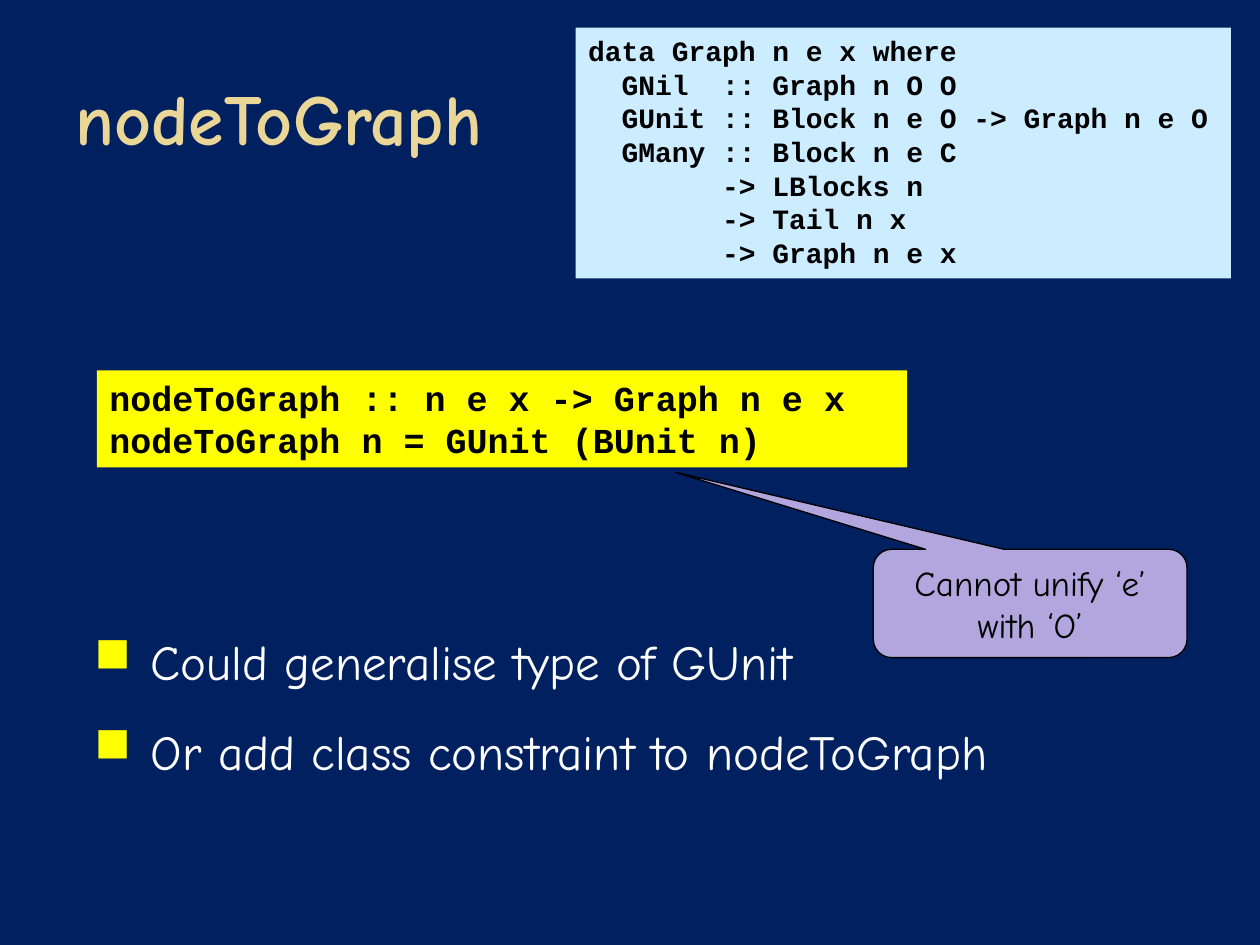
from dataclasses import dataclass

from lxml import etree
from pptx import Presentation
from pptx.dml.color import RGBColor
from pptx.enum.shapes import MSO_SHAPE
from pptx.enum.text import MSO_ANCHOR, PP_ALIGN
from pptx.oxml.ns import qn
from pptx.slide import Slide
from pptx.text.text import TextFrame, _Paragraph
from pptx.util import Pt

RECTANGLE = MSO_SHAPE.RECTANGLE
CALLOUT = MSO_SHAPE.ROUNDED_RECTANGULAR_CALLOUT
TOP, MIDDLE = MSO_ANCHOR.TOP, MSO_ANCHOR.MIDDLE
LEFT, CENTER = PP_ALIGN.LEFT, PP_ALIGN.CENTER

NAVY = RGBColor(0x00, 0x20, 0x60)
GOLD = RGBColor(0xEA, 0xD6, 0x96)
YELLOW = RGBColor(0xFF, 0xFF, 0x00)
PALE_BLUE = RGBColor(0xCC, 0xEC, 0xFF)
LILAC = RGBColor(0xB2, 0xA6, 0xDF)
BLACK = RGBColor(0x00, 0x00, 0x00)
WHITE = RGBColor(0xFF, 0xFF, 0xFF)

HAND = "Comic Neue"
CODE = "Courier New"


@dataclass(frozen=True)
class Area:
    """A rectangle on the slide, in points."""

    left: float
    top: float
    width: float
    height: float

    def lengths(self) -> tuple[Pt, Pt, Pt, Pt]:
        """Return the rectangle as lengths."""
        return Pt(self.left), Pt(self.top), Pt(self.width), Pt(self.height)


@dataclass(frozen=True)
class Style:
    """The look of a block of text."""

    font: str
    size: float
    color: RGBColor
    bold: bool = False
    align: PP_ALIGN = LEFT
    anchor: MSO_ANCHOR = TOP
    wrap: bool = True


@dataclass(frozen=True)
class CodePanel:
    """A filled panel of source code."""

    area: Area
    fill: RGBColor
    size: float
    lines: tuple[str, ...]


TITLE_STYLE = Style(HAND, 41, GOLD, bold=True, anchor=MIDDLE)
BODY_STYLE = Style(HAND, 28, WHITE)
CALLOUT_STYLE = Style(HAND, 20, BLACK, align=CENTER, anchor=MIDDLE)

BULLETS = ("Could generalise type of GUnit", "Or add class constraint to nodeToGraph")
PANELS = (
    CodePanel(
        Area(55.4, 211.7, 463, 55.4), YELLOW, 20,
        ("nodeToGraph :: n e x -> Graph n e x", "nodeToGraph n = GUnit (BUnit n)"),
    ),
    CodePanel(
        Area(329, 15.8, 374.4, 143.3), PALE_BLUE, 16,
        (
            "data Graph n e x where",
            "  GNil  :: Graph n O O",
            "  GUnit :: Block n e O -> Graph n e O",
            "  GMany :: Block n e C",
            "        -> LBlocks n",
            "        -> Tail n x",
            "        -> Graph n e x",
        ),
    ),
)


def write(frame: TextFrame, lines: tuple[str, ...], style: Style) -> None:
    """Fill a text frame with one paragraph per line."""
    frame.word_wrap = style.wrap
    frame.vertical_anchor = style.anchor
    frame.text = "\n".join(lines)
    for paragraph in frame.paragraphs:
        paragraph.alignment = style.align
        paragraph.font.name = style.font
        paragraph.font.size = Pt(style.size)
        paragraph.font.bold = style.bold
        paragraph.font.color.rgb = style.color


def add_text(page: Slide, area: Area, lines: tuple[str, ...], style: Style) -> TextFrame:
    """Add a text box and return its frame."""
    frame = page.shapes.add_textbox(*area.lengths()).text_frame
    write(frame, lines, style)
    return frame


def add_bullet(paragraph: _Paragraph) -> None:
    """Give a paragraph a hanging yellow square."""
    paragraph.space_before = Pt(18)
    properties = paragraph._p.get_or_add_pPr()
    properties.set("marL", str(Pt(43.2)))
    properties.set("indent", str(Pt(-32.4)))
    color = etree.Element(qn("a:buClr"))
    etree.SubElement(color, qn("a:srgbClr"), val=str(YELLOW))
    mark = etree.Element(qn("a:buChar"), char="■")
    spacing = properties.find(qn("a:spcBef"))
    spacing.addnext(color)
    color.addnext(mark)


def add_code(page: Slide, panel: CodePanel) -> None:
    """Add a panel of code."""
    box = page.shapes.add_shape(RECTANGLE, *panel.area.lengths())
    box.shadow.inherit = False
    box.fill.solid()
    box.fill.fore_color.rgb = panel.fill
    box.line.fill.background()
    write(box.text_frame, panel.lines, Style(CODE, panel.size, BLACK, bold=True, wrap=False))


def add_callout(page: Slide, area: Area, text: str) -> None:
    """Add a rounded callout pointing up and to the left."""
    box = page.shapes.add_shape(CALLOUT, *area.lengths())
    box.shadow.inherit = False
    for index, value in enumerate((-1.13, -1.21, 0.17)):
        box.adjustments[index] = value
    box.fill.solid()
    box.fill.fore_color.rgb = LILAC
    box.line.color.rgb = BLACK
    box.line.width = Pt(0.75)
    write(box.text_frame, (text,), CALLOUT_STYLE)


def main() -> None:
    """Build the slide and save it."""
    deck = Presentation()
    deck.slide_width, deck.slide_height = Pt(720), Pt(540)
    page = deck.slides.add_slide(deck.slide_layouts[6])
    page.background.fill.solid()
    page.background.fill.fore_color.rgb = NAVY
    add_text(page, Area(36, 21.6, 648, 90), ("nodeToGraph",), TITLE_STYLE)
    body = add_text(page, Area(36, 357.1, 648, 139.7), BULLETS, BODY_STYLE)
    for paragraph in body.paragraphs:
        add_bullet(paragraph)
    for panel in PANELS:
        add_code(page, panel)
    add_callout(page, Area(499, 313.9, 179.3, 61.9), "Cannot unify ‘e’ with ‘O’")
    deck.save("out.pptx")


if __name__ == "__main__":
    main()
